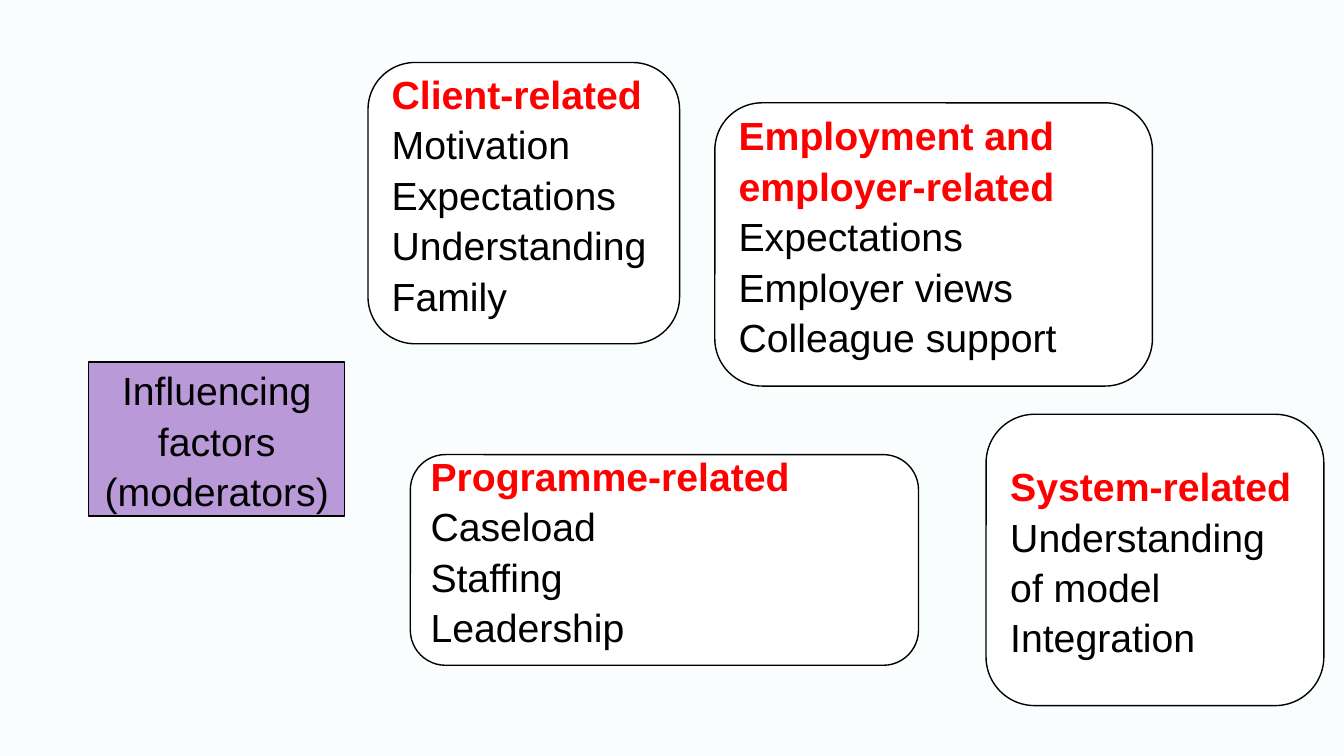
from pptx import Presentation
from pptx.dml.color import RGBColor
from pptx.enum.shapes import MSO_SHAPE
from pptx.enum.text import MSO_ANCHOR, PP_ALIGN
from pptx.util import Inches, Pt

BLACK, RED, WHITE, LILAC, BACKGROUND = "000000", "FF0000", "FFFFFF", "B999D8", "FAFDFE"

# Box (left, top, width, height), bottom inset, heading, factors
FACTOR_GROUPS = [
    ((3.65, 0.62, 3.09, 2.79), 0.25, "Client-related",
     ["Motivation", "Expectations", "Understanding", "Family"]),
    ((7.09, 1.02, 4.34, 2.81), 0.25, "Employment and employer-related",
     ["Expectations", "Employer views", "Colleague support"]),
    ((4.07, 4.51, 5.04, 2.09), 0.25, "Programme-related",
     ["Caseload", "Staffing", "Leadership"]),
    ((9.78, 4.11, 3.35, 2.89), 0.05, "System-related",
     ["Understanding of model", "Integration"]),
]


def rgb(value):
    return RGBColor.from_string(value)


def add_box(s, kind, box, fill):
    sp = s.shapes.add_shape(kind, *map(Inches, box))
    sp.shadow.inherit = False
    sp.fill.solid()
    sp.fill.fore_color.rgb = rgb(fill)
    sp.line.color.rgb = rgb(BLACK)
    sp.line.width = Pt(1)
    tf = sp.text_frame
    tf.word_wrap = True
    tf.vertical_anchor = MSO_ANCHOR.MIDDLE
    return sp


def style_paragraph(p, color=BLACK, bold=False, align=PP_ALIGN.LEFT):
    p.alignment = align
    p.line_spacing = 1.07
    p.font.name = "Arial"
    p.font.size = Pt(28)
    p.font.bold = bold
    p.font.color.rgb = rgb(color)


def add_topic(s, box, text):
    tf = add_box(s, MSO_SHAPE.RECTANGLE, box, LILAC).text_frame
    tf.text = text
    p = tf.paragraphs[0]
    style_paragraph(p, align=PP_ALIGN.CENTER)
    p.space_after = Pt(8)


def add_factor_group(s, box, bottom_inset, heading, factors):
    sp = add_box(s, MSO_SHAPE.ROUNDED_RECTANGLE, box, WHITE)
    sp.adjustments[0] = 0.167
    tf = sp.text_frame
    tf.margin_bottom = Inches(bottom_inset)
    tf.text = "\n".join([heading, *factors])
    for p in tf.paragraphs:
        style_paragraph(p)
    style_paragraph(tf.paragraphs[0], RED, bold=True)


def main():
    prs = Presentation()
    prs.slide_width, prs.slide_height = Inches(13.33), Inches(7.5)
    s = prs.slides.add_slide(prs.slide_layouts[6])
    s.background.fill.solid()
    s.background.fill.fore_color.rgb = rgb(BACKGROUND)

    # Topic on the left, groups of factors around it
    add_topic(s, (0.88, 3.59, 2.54, 1.53), "Influencing factors (moderators)")
    for group in FACTOR_GROUPS:
        add_factor_group(s, *group)

    prs.save("out.pptx")


if __name__ == "__main__":
    main()
